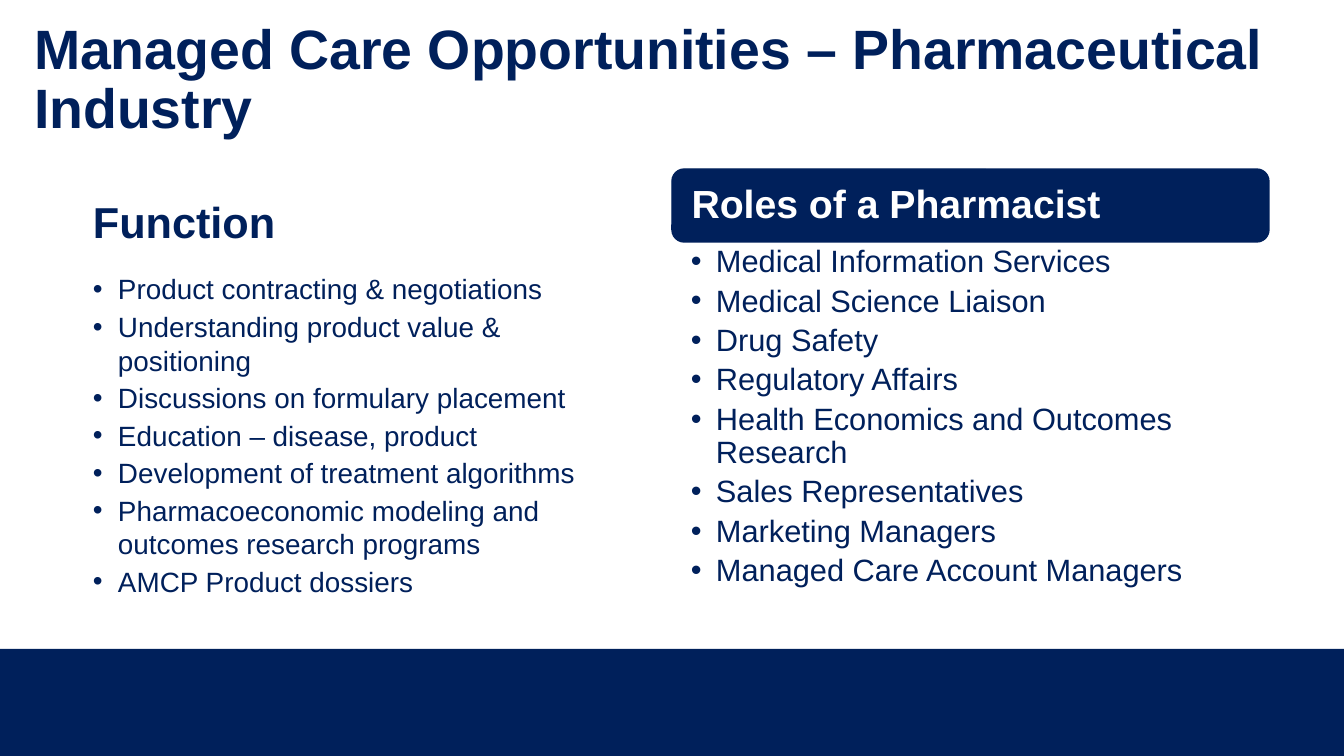
from dataclasses import dataclass

from lxml.etree import SubElement
from pptx import Presentation
from pptx.dml.color import RGBColor
from pptx.enum.shapes import MSO_SHAPE as Preset
from pptx.enum.text import MSO_ANCHOR as Anchor, PP_ALIGN as Align
from pptx.oxml.ns import qn
from pptx.util import Emu, Pt


@dataclass(frozen=True)
class Theme:
    """Colours, font and type sizes of the slide."""
    navy: RGBColor = RGBColor(0x00, 0x20, 0x5B)
    white: RGBColor = RGBColor(0xFF, 0xFF, 0xFF)
    font: str = "Arial"
    title: float = 39.6
    heading: float = 30.9
    banner: float = 28
    functions: float = 19.9
    roles: float = 22


THEME = Theme()
SLIDE_SIZE = (1344, 756)
BULLET_INDENT = 25

FUNCTIONS = [
    "Product contracting & negotiations",
    "Understanding product value & positioning",
    "Discussions on formulary placement",
    "Education – disease, product",
    "Development of treatment algorithms",
    "Pharmacoeconomic modeling and outcomes research programs",
    "AMCP Product dossiers",
]
ROLES = [
    "Medical Information Services",
    "Medical Science Liaison",
    "Drug Safety",
    "Regulatory Affairs",
    "Health Economics and Outcomes Research",
    "Sales Representatives",
    "Marketing Managers",
    "Managed Care Account Managers",
]


def px(length):
    """Turn a length in pixels into EMU."""
    return Emu(round(length * 914400 / 100.8))


def set_frame(shape, insets=(0, 0, 0, 0), anchor=Anchor.TOP):
    """Set wrapping, insets and anchor, and return the text frame."""
    frame = shape.text_frame
    frame.word_wrap = True
    frame.vertical_anchor = anchor
    (frame.margin_left, frame.margin_top,
     frame.margin_right, frame.margin_bottom) = map(px, insets)
    return frame


def write(paragraph, text, size, color=THEME.navy, bold=False, spacing=1.0):
    """Fill a left-aligned paragraph and set its font."""
    paragraph.text = text
    paragraph.alignment = Align.LEFT
    paragraph.line_spacing = spacing
    font = paragraph.font
    font.name, font.size, font.bold = THEME.font, Pt(size), bold
    font.color.rgb = color


def add_bullet(paragraph):
    """Give a paragraph a round bullet with a hanging indent."""
    properties = paragraph._p.get_or_add_pPr()
    properties.set("marL", str(px(BULLET_INDENT)))
    properties.set("indent", str(-px(BULLET_INDENT)))
    SubElement(properties, qn("a:buFont"), typeface=THEME.font)
    SubElement(properties, qn("a:buChar"), char="•")


def add_block(slide, preset, box):
    """Add a flat navy shape."""
    shape = slide.shapes.add_shape(preset, *map(px, box))
    shape.shadow.inherit = False
    shape.fill.solid()
    shape.fill.fore_color.rgb = THEME.navy
    shape.line.color.rgb = THEME.navy
    shape.line.width = Pt(1)
    return shape


def add_title(slide, text, box):
    """Place and format the title placeholder."""
    title = slide.shapes.title
    title.left, title.top, title.width, title.height = map(px, box)
    frame = set_frame(title, anchor=Anchor.MIDDLE)
    write(frame.paragraphs[0], text, THEME.title, bold=True, spacing=0.9)


def add_functions(slide, heading, items, box):
    """Add the heading with its bulleted functions."""
    frame = set_frame(slide.shapes.add_textbox(*map(px, box)))
    write(frame.paragraphs[0], heading, THEME.heading, bold=True)
    for index, item in enumerate(items):
        paragraph = frame.add_paragraph()
        add_bullet(paragraph)
        write(paragraph, item, THEME.functions)
        paragraph.space_before = Pt(3 if index else 18)


def add_banner(slide, text, box):
    """Add the rounded banner above the roles."""
    frame = set_frame(add_block(slide, Preset.ROUNDED_RECTANGLE, box),
                      (16, 12, 16, 12), Anchor.MIDDLE)
    write(frame.paragraphs[0], text, THEME.banner, THEME.white, True, 0.9)


def add_roles(slide, items, box):
    """Add the bulleted roles."""
    frame = set_frame(slide.shapes.add_textbox(*map(px, box)), (19, 4, 22, 4))
    for index, item in enumerate(items):
        paragraph = frame.add_paragraph() if index else frame.paragraphs[0]
        add_bullet(paragraph)
        write(paragraph, item, THEME.roles, spacing=0.9)
        paragraph.space_after = Pt(THEME.roles * 0.2)


def main():
    """Build and save the slide."""
    presentation = Presentation()
    presentation.slide_width, presentation.slide_height = map(px, SLIDE_SIZE)
    slide = presentation.slides.add_slide(presentation.slide_layouts[5])
    footer = add_block(slide, Preset.RECTANGLE, (0, 649, 1344, 107))
    footer.line.fill.background()
    add_title(slide, "Managed Care Opportunities – Pharmaceutical Industry",
              (34, 8, 1258, 146))
    add_functions(slide, "Function", FUNCTIONS, (93, 195, 500, 398))
    add_banner(slide, "Roles of a Pharmacist", (672, 169, 597, 73))
    add_roles(slide, ROLES, (672, 242, 597, 345))
    presentation.save("out.pptx")


if __name__ == "__main__":
    main()
